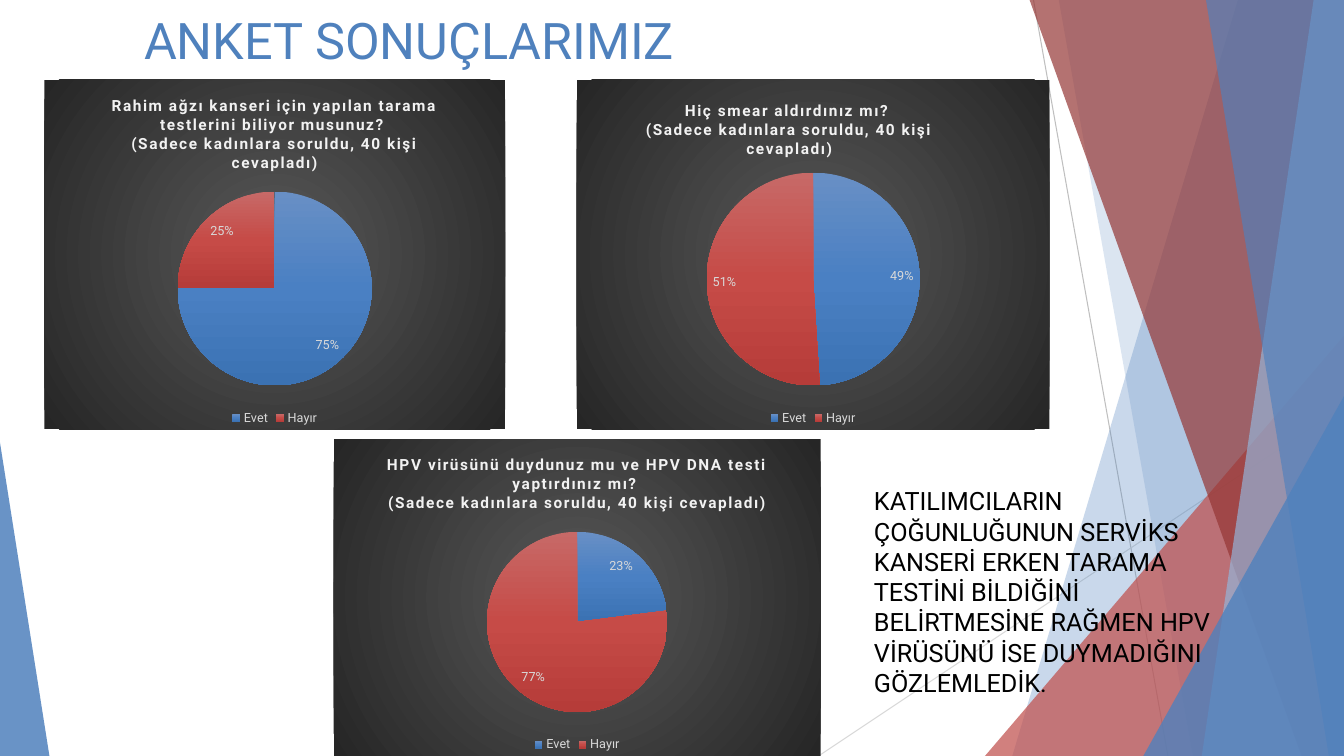
from dataclasses import dataclass

from lxml.etree import SubElement
from pptx import Presentation
from pptx.chart.chart import Chart
from pptx.chart.data import CategoryChartData
from pptx.dml.color import RGBColor
from pptx.enum.chart import XL_CHART_TYPE as ChartType
from pptx.enum.chart import XL_LABEL_POSITION as LabelPosition
from pptx.enum.chart import XL_LEGEND_POSITION as LegendPosition
from pptx.enum.shapes import MSO_CONNECTOR as Connector
from pptx.enum.shapes import MSO_SHAPE as Preset
from pptx.enum.text import MSO_ANCHOR as Anchor
from pptx.oxml import parse_xml
from pptx.oxml.ns import nsdecls, qn
from pptx.shapes.autoshape import Shape
from pptx.slide import Slide
from pptx.text.text import Font
from pptx.util import Emu, Inches, Pt

SLIDE_WIDTH, SLIDE_HEIGHT = Inches(13.33), Inches(7.5)
FONT = "Roboto"

BLUE = RGBColor(0x4F, 0x81, 0xBD)
LIGHT_BLUE = RGBColor(0x95, 0xB3, 0xD7)
RED = RGBColor(0xC0, 0x50, 0x4D)
DARK_RED = RGBColor(0x95, 0x37, 0x35)
GRAY = RGBColor(0xBF, 0xBF, 0xBF)
PALE_GRAY = RGBColor(0xD9, 0xD9, 0xD9)
NEAR_WHITE = RGBColor(0xF2, 0xF2, 0xF2)
BLACK = RGBColor(0, 0, 0)
PANEL_COLORS = [RGBColor(0x59, 0x59, 0x59), RGBColor(0x26, 0x26, 0x26)]
SLICE_COLORS = [
    [RGBColor(0x68, 0x8F, 0xC5), RGBColor(0x4A, 0x80, 0xC3), RGBColor(0x3B, 0x72, 0xB3)],
    [RGBColor(0xC7, 0x69, 0x67), RGBColor(0xC6, 0x4B, 0x47), RGBColor(0xB6, 0x3C, 0x39)],
]
RADIAL = '<a:path path="circle"><a:fillToRect l="50000" t="50000" r="50000" b="50000"/></a:path>'
DOWNWARD = '<a:lin ang="5400000" scaled="0"/>'


@dataclass(frozen=True)
class Frame:
    """A box in percent of the slide's width and height."""
    left: float
    top: float
    width: float
    height: float

    def emu(self) -> tuple[Emu, Emu, Emu, Emu]:
        return (across(self.left), down(self.top), across(self.width), down(self.height))


@dataclass(frozen=True)
class Ray:
    start: tuple[float, float]
    end: tuple[float, float]
    color: RGBColor


@dataclass(frozen=True)
class Band:
    """A facet reaching the right edge, with a slanted left side."""
    top_left: float
    bottom_left: float
    color: RGBColor
    opacity: int


@dataclass(frozen=True)
class Wedge:
    frame: Frame
    apex: float
    color: RGBColor
    opacity: int


@dataclass(frozen=True)
class Survey:
    frame: Frame
    question: str
    yes: int
    no: int
    title_offset: tuple[float, float] | None = None


RAYS = [Ray((76.9, 0), (86.9, 100), GRAY), Ray((100, 53.7), (60.9, 100), PALE_GRAY)]
FACETS = [
    Band(92.12, 75.32, BLUE, 30),
    Band(78.77, 88.75, BLUE, 20),
    Wedge(Frame(73.29, 44.4, 26.71, 55.6), 1, RED, 72),
    Band(76.59, 96.85, DARK_RED, 70),
    Band(97.75, 89.42, LIGHT_BLUE, 70),
    Band(89.72, 98.87, BLUE, 65),
    Wedge(Frame(85.07, 52.4, 14.93, 47.6), 1, BLUE, 80),
    Wedge(Frame(0, 58.53, 3.68, 41.47), 0, BLUE, 85),
]
AUDIENCE = "(Sadece kadınlara soruldu, 40 kişi cevapladı)"
SURVEYS = [
    Survey(Frame(3.3, 10.53, 34.28, 46.27),
           "Rahim ağzı kanseri için yapılan tarama testlerini biliyor musunuz? ", 75, 25),
    Survey(Frame(42.91, 10.53, 35.18, 46.27), "Hiç smear aldırdınız mı? ", 49, 51, (0.14, 0.05)),
    Survey(Frame(24.83, 58.13, 36.23, 41.87),
           "HPV virüsünü duydunuz mu ve HPV DNA testi yaptırdınız mı? ", 23, 77),
]
CONCLUSION = (
    "KATILIMCILARIN ÇOĞUNLUĞUNUN SERVİKS KANSERİ ERKEN TARAMA TESTİNİ BİLDİĞİNİ "
    "BELİRTMESİNE RAĞMEN HPV VİRÜSÜNÜ İSE DUYMADIĞINI GÖZLEMLEDİK."
)


def across(percent: float) -> Emu:
    return Emu(round(SLIDE_WIDTH * percent / 100))


def down(percent: float) -> Emu:
    return Emu(round(SLIDE_HEIGHT * percent / 100))


def style_font(font: Font, size: float, color: RGBColor, bold: bool = False) -> None:
    font.name, font.size, font.bold = FONT, Pt(size), bold
    font.color.rgb = color


def draw_ray(slide: Slide, ray: Ray) -> None:
    (x1, y1), (x2, y2) = ray.start, ray.end
    line = slide.shapes.add_connector(Connector.STRAIGHT, across(x1), down(y1), across(x2), down(y2))
    line.line.color.rgb = ray.color
    line.line.width = Pt(0.75)
    SubElement(line._element.spPr, qn("a:effectLst"))


def add_outline(slide: Slide, facet: Band | Wedge) -> Shape:
    if isinstance(facet, Wedge):
        shape = slide.shapes.add_shape(Preset.ISOSCELES_TRIANGLE, *facet.frame.emu())
        shape.adjustments[0] = facet.apex
        return shape
    top, bottom, right = down(-0.1), down(100), across(100)
    builder = slide.shapes.build_freeform(across(facet.top_left), top)
    builder.add_line_segments([(right, top), (right, bottom), (across(facet.bottom_left), bottom)])
    return builder.convert_to_shape()


def draw_facet(slide: Slide, facet: Band | Wedge) -> None:
    shape = add_outline(slide, facet)
    shape.shadow.inherit = False
    shape.line.fill.background()
    shape.fill.solid()
    shape.fill.fore_color.rgb = facet.color
    color = shape._element.spPr.find(f"{qn('a:solidFill')}/{qn('a:srgbClr')}")
    SubElement(color, qn("a:alpha"), val=str(facet.opacity * 1000))


def draw_text(slide: Slide, frame: Frame, text: str, size: float, color: RGBColor, anchor: Anchor) -> None:
    text_frame = slide.shapes.add_textbox(*frame.emu()).text_frame
    text_frame.word_wrap = True
    text_frame.vertical_anchor = anchor
    run = text_frame.paragraphs[0].add_run()
    run.text = text
    style_font(run.font, size, color)


def shape_properties(colors: list[RGBColor], direction: str):
    """Chart-part properties with an evenly spaced gradient and no outline."""
    step = 100000 // (len(colors) - 1)
    stops = "".join(f'<a:gs pos="{i * step}"><a:srgbClr val="{color}"/></a:gs>'
                    for i, color in enumerate(colors))
    return parse_xml(f'<c:spPr {nsdecls("c", "a")}><a:gradFill><a:gsLst>{stops}</a:gsLst>'
                     f'{direction}</a:gradFill><a:ln><a:noFill/></a:ln></c:spPr>')


def write_chart_title(chart: Chart, survey: Survey) -> None:
    title = chart.chart_title
    text_frame = title.text_frame
    for paragraph, text in ((text_frame.paragraphs[0], survey.question),
                            (text_frame.add_paragraph(), AUDIENCE)):
        run = paragraph.add_run()
        run.text = text
        style_font(run.font, 11, NEAR_WHITE, bold=True)
        run.font._element.set("spc", "100")
    title.include_in_layout = False
    if survey.title_offset:
        x, y = survey.title_offset
        for layout in title._element.findall(qn("c:layout")):
            title._element.remove(layout)
        title._element.find(qn("c:tx")).addnext(parse_xml(
            f'<c:layout {nsdecls("c")}><c:manualLayout><c:xMode val="edge"/><c:yMode val="edge"/>'
            f'<c:x val="{x}"/><c:y val="{y}"/></c:manualLayout></c:layout>'))


def draw_survey(slide: Slide, survey: Survey) -> None:
    data = CategoryChartData()
    data.categories = ["Evet", "Hayır"]
    data.add_series("Series 1", (survey.yes, survey.no))
    chart = slide.shapes.add_chart(ChartType.PIE, *survey.frame.emu(), data).chart
    style_font(chart.font, 10, BLACK)
    chart._chartSpace.find(qn("c:chart")).addnext(shape_properties(PANEL_COLORS, RADIAL))
    write_chart_title(chart, survey)

    chart.has_legend = True
    chart.legend.position = LegendPosition.BOTTOM
    chart.legend.include_in_layout = False
    style_font(chart.legend.font, 9, PALE_GRAY)

    plot = chart.plots[0]
    plot.vary_by_categories = True
    series = plot.series[0]
    for index, colors in enumerate(SLICE_COLORS):
        series.points[index].format.fill.background()
        properties = series._element.findall(f"{qn('c:dPt')}/{qn('c:spPr')}")[index]
        properties.getparent().replace(properties, shape_properties(colors, DOWNWARD))
    labels = series.data_labels
    labels.show_percentage, labels.show_value = True, False
    labels.position = LabelPosition.INSIDE_END
    style_font(labels.font, 9, PALE_GRAY)


def main() -> None:
    presentation = Presentation()
    presentation.slide_width, presentation.slide_height = SLIDE_WIDTH, SLIDE_HEIGHT
    slide = presentation.slides.add_slide(presentation.slide_layouts[6])
    for ray in RAYS:
        draw_ray(slide, ray)
    for facet in FACETS:
        draw_facet(slide, facet)
    draw_text(slide, Frame(9.98, 0, 64.44, 10.53), "ANKET SONUÇLARIMIZ", 36, BLUE, Anchor.MIDDLE)
    for survey in SURVEYS:
        draw_survey(slide, survey)
    draw_text(slide, Frame(64.29, 63.6, 28.21, 29.6), CONCLUSION, 18, BLACK, Anchor.TOP)
    presentation.save("out.pptx")


if __name__ == "__main__":
    main()
